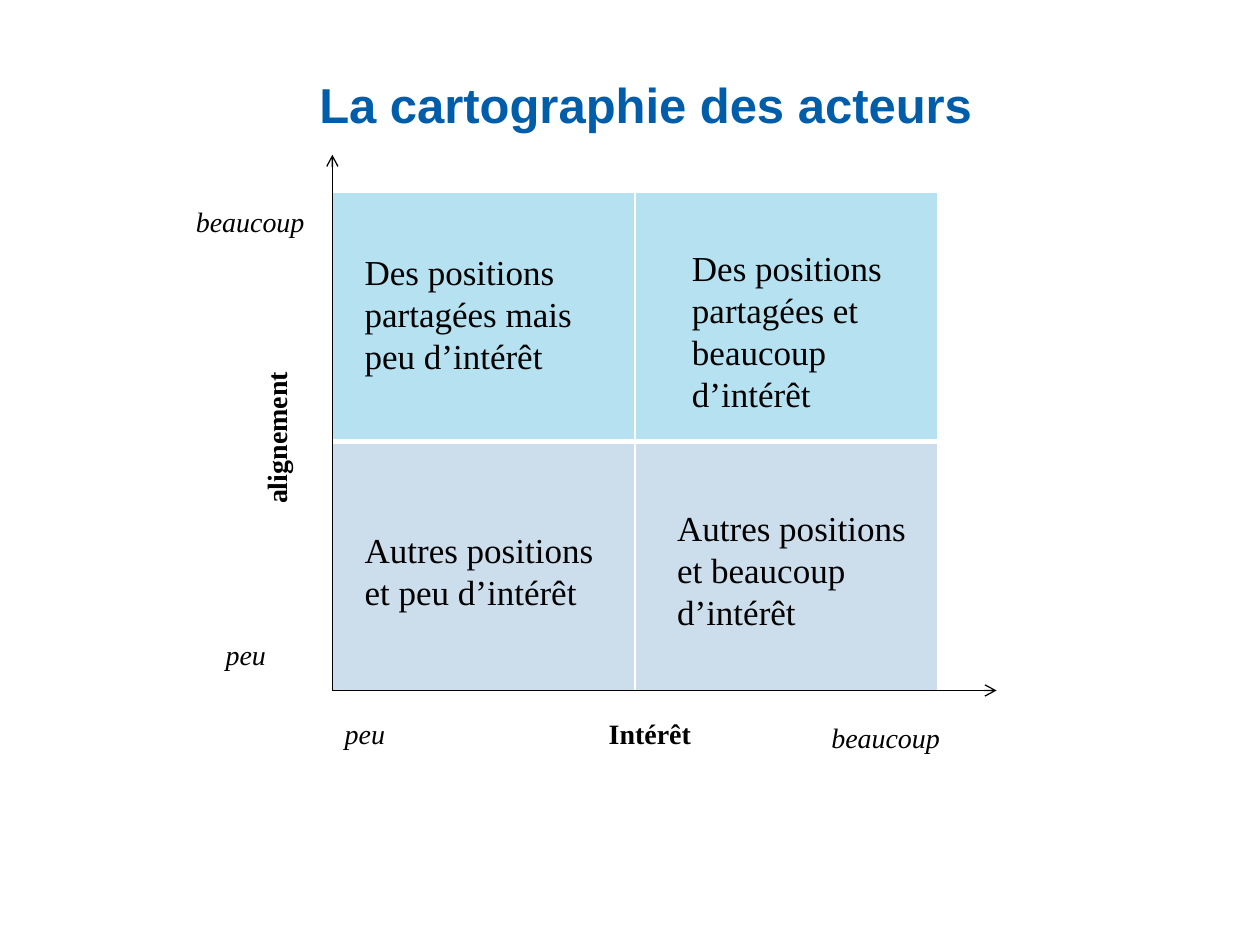
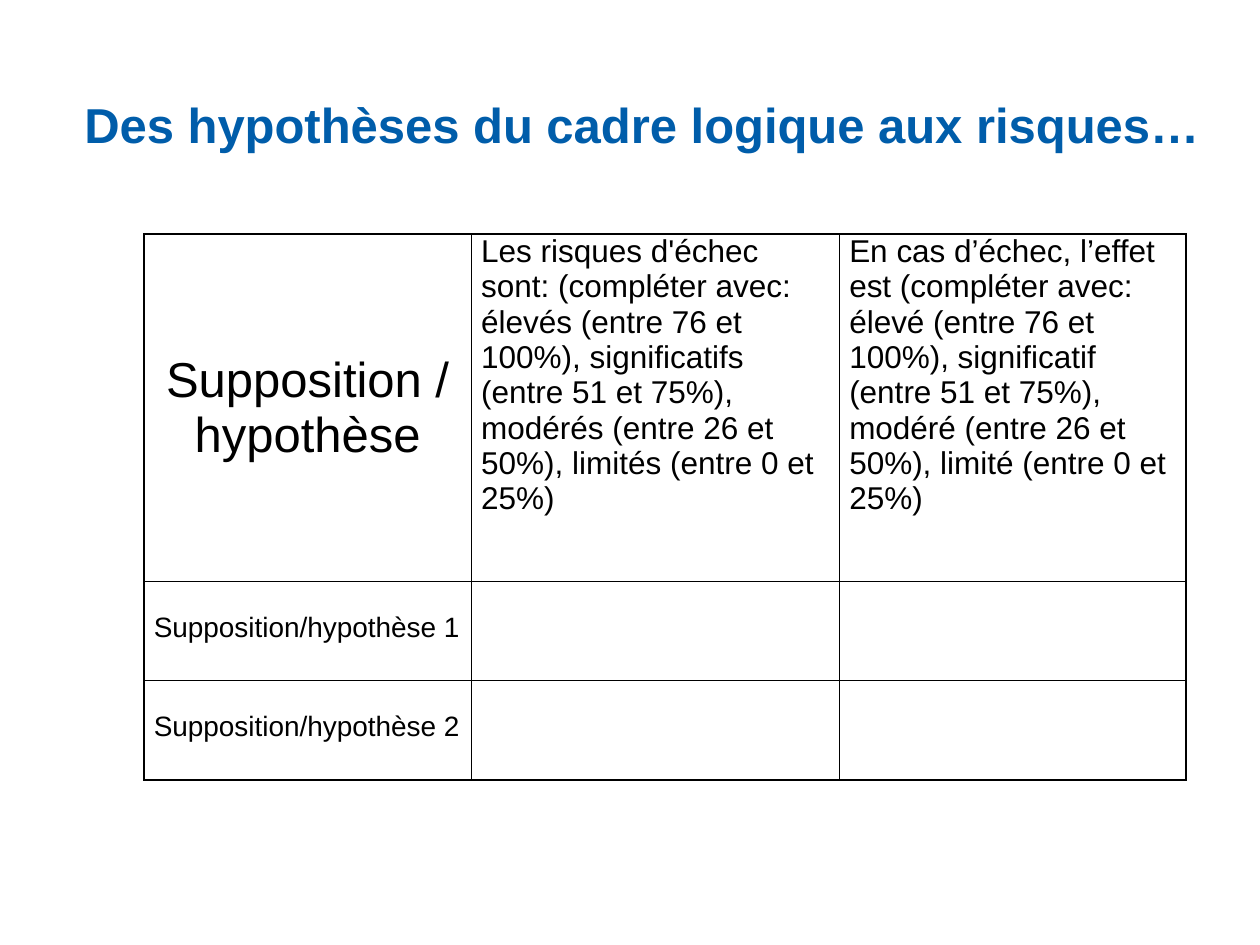
import dataclasses

import lxml.etree
import pptx
import pptx.dml.color
import pptx.enum.shapes
import pptx.enum.text
import pptx.oxml.ns
import pptx.util

Cm = pptx.util.Cm
Pt = pptx.util.Pt
RGB = pptx.dml.color.RGBColor.from_string
ALIGN = pptx.enum.text.PP_ALIGN
ANCHOR = pptx.enum.text.MSO_ANCHOR
qn = pptx.oxml.ns.qn


@dataclasses.dataclass(frozen=True)
class Theme:
    title: str = "005DAA"
    text: str = "000000"
    grid: str = "FFFFFF"
    shared: str = "0099CC"
    other: str = "CCDEEC"
    sans: str = "Arial"
    serif: str = "Times New Roman"
    title_size: int = 28
    quadrant_size: int = 20
    criteria_size: int = 18
    label_size: int = 16


theme = Theme()


def write(tf, text, font, size, color=theme.text, align=ALIGN.LEFT, bold=False, italic=False):
    tf.word_wrap = True
    p = tf.paragraphs[0]
    p.text = text
    p.alignment = align
    for r in p.runs:
        r.font.name = font
        r.font.size = Pt(size)
        r.font.bold = bold
        r.font.italic = italic
        r.font.color.rgb = RGB(color)


def add_borders(cell, color, widths):
    """Draw the left, right, top and bottom borders, widths in points; call before filling."""
    tcPr = cell._tc.get_or_add_tcPr()
    for side, width in zip("LRTB", widths):
        ln = lxml.etree.SubElement(tcPr, qn(f"a:ln{side}"), w=str(Pt(width)))
        fill = lxml.etree.SubElement(ln, qn("a:solidFill"))
        lxml.etree.SubElement(fill, qn("a:srgbClr"), val=color)


prs = pptx.Presentation()
prs.slide_width, prs.slide_height = Cm(25.4), Cm(19.05)

# Slides and titles
titles = [
    ("La cartographie des acteurs", (2.69, 0.91, 20.65, 1.91), ALIGN.CENTER),
    ("Des hypothèses du cadre logique aux risques…", (1.45, 0.91, 23.88, 2.31), ALIGN.LEFT),
]
for title, box, align in titles:
    s = prs.slides.add_slide(prs.slide_layouts[6])
    sp = s.shapes.add_textbox(*map(Cm, box))
    sp.text_frame.vertical_anchor = ANCHOR.BOTTOM
    write(sp.text_frame, title, theme.sans, theme.title_size, theme.title, align, bold=True)
map_slide, risk_slide = prs.slides

# Stakeholder map: coloured quadrants
map_left, map_top, quadrant_w, quadrant_h = 6.7, 3.88, 6.1, 5.02
table = map_slide.shapes.add_table(
    2, 2, Cm(map_left), Cm(map_top), Cm(2 * quadrant_w), Cm(2 * quadrant_h)).table
table.first_row = table.horz_banding = False
for row, (color, widths) in enumerate([(theme.shared, (1, 1, 1, 3)), (theme.other, (1, 1, 3, 1))]):
    for cell in table.rows[row].cells:
        add_borders(cell, theme.grid, widths)
        cell.fill.solid()
        cell.fill.fore_color.rgb = RGB(color)
        if color == theme.shared:
            clr = cell._tc.tcPr.find(qn("a:solidFill")).find(qn("a:srgbClr"))
            lxml.etree.SubElement(clr, qn("a:alpha"), val="29000")

# Axes
axis_y = map_top + 2 * quadrant_h
for end_x, end_y in [(map_left, 3.12), (20.09, axis_y)]:
    axis = map_slide.shapes.add_connector(
        pptx.enum.shapes.MSO_CONNECTOR.STRAIGHT,
        Cm(map_left), Cm(axis_y), Cm(end_x), Cm(end_y))
    axis.line.color.rgb = RGB(theme.text)
    axis.line.width = Pt(0.75)
    lxml.etree.SubElement(axis.line._get_or_add_ln(), qn("a:tailEnd"), type="arrow")
    lxml.etree.SubElement(axis._element.spPr, qn("a:effectLst"))

# Axis scale
for text, left, top, width in [
    ("beaucoup", 16.51, 14.4, 2.8),
    ("peu", 6.7, 14.33, 2.2),
    ("peu", 4.3, 12.73, 2.2),
    ("beaucoup", 3.7, 3.99, 2.8),
]:
    sp = map_slide.shapes.add_textbox(Cm(left), Cm(top), Cm(width), Cm(0.94))
    write(sp.text_frame, text, theme.serif, theme.label_size, italic=True)

# Axis names
for text, box, direction in [
    ("alignement", (5.1, 5.13, 1.2, 7.4), "vert270"),
    ("Intérêt", (9.1, 14.33, 8, 0.94), "horz"),
]:
    sp = map_slide.shapes.add_textbox(*map(Cm, box))
    write(sp.text_frame, text, theme.serif, theme.label_size, align=ALIGN.CENTER, bold=True)
    sp.text_frame._txBody.bodyPr.set("vert", direction)

# Quadrant texts
for text, left, top, height in [
    ("Des positions partagées mais peu d’intérêt", 7.1, 4.93, 2.82),
    ("Autres positions et peu d’intérêt", 7.1, 10.52, 1.96),
    ("Des positions partagées et beaucoup d’intérêt", 13.7, 4.85, 3.68),
    ("Autres positions et beaucoup d’intérêt", 13.4, 10.08, 2.82),
]:
    sp = map_slide.shapes.add_textbox(Cm(left), Cm(top), Cm(5.6), Cm(height))
    write(sp.text_frame, text, theme.serif, theme.quadrant_size)

# Risk table
col_widths, row_heights = [6.6, 7.42, 6.99], [7, 2, 2]
table = risk_slide.shapes.add_table(
    3, 3, Cm(2.9), Cm(4.72), Cm(sum(col_widths)), Cm(sum(row_heights))).table
table.first_row = table.horz_banding = False
for column, width in zip(table.columns, col_widths):
    column.width = Cm(width)
for row, height in zip(table.rows, row_heights):
    row.height = Cm(height)
for cell in table.iter_cells():
    add_borders(cell, theme.text, (1, 1, 1, 1))
    cell.fill.background()
    cell.margin_left = cell.margin_right = Cm(0.2)
    cell.margin_top = cell.margin_bottom = 0

heading = table.cell(0, 0)
heading.vertical_anchor = ANCHOR.MIDDLE
write(heading.text_frame, "Supposition / hypothèse", theme.sans, theme.title_size, align=ALIGN.CENTER)

criteria = [
    "Les risques d'échec sont: (compléter avec: élevés (entre 76 et 100%), significatifs "
    "(entre 51 et 75%), modérés (entre 26 et 50%), limités (entre 0 et 25%)",
    "En cas d’échec, l’effet est (compléter avec: élevé (entre 76 et 100%), significatif "
    "(entre 51 et 75%), modéré (entre 26 et 50%), limité (entre 0 et 25%)",
]
for col, text in enumerate(criteria, start=1):
    write(table.cell(0, col).text_frame, text, theme.sans, theme.criteria_size)

for number in (1, 2):
    cell = table.cell(number, 0)
    cell.margin_top = Cm(0.62)
    write(cell.text_frame, f"Supposition/hypothèse {number}", theme.sans, theme.label_size)

prs.save("out.pptx")
